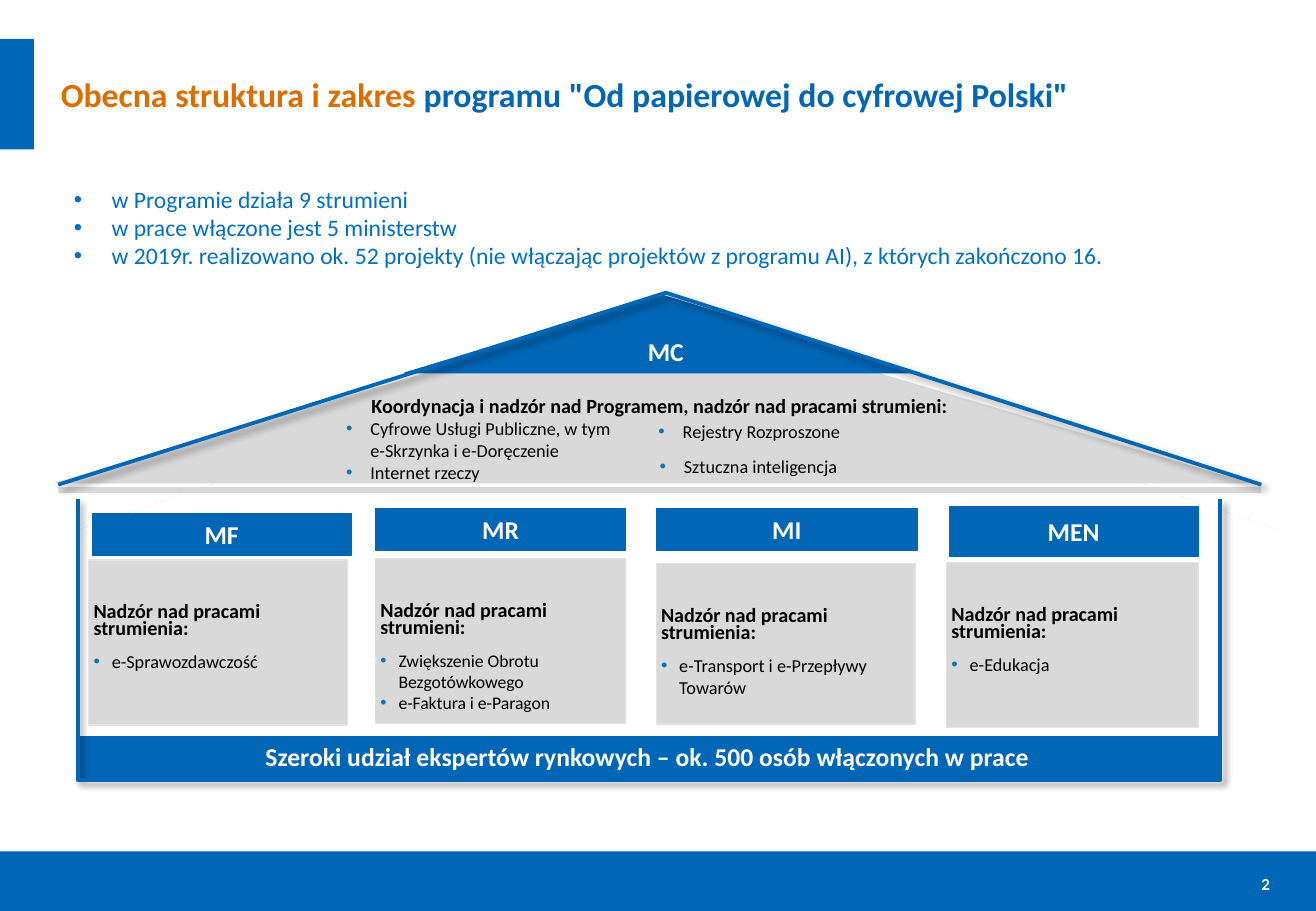
import pptx
import pptx.dml.color
import pptx.enum.shapes
import pptx.enum.text
import pptx.oxml.ns
import pptx.util
from dataclasses import dataclass
from lxml import etree

Inches, Pt = pptx.util.Inches, pptx.util.Pt
SHAPES = pptx.enum.shapes.MSO_SHAPE
ALIGN = pptx.enum.text.PP_ALIGN
ANCHOR = pptx.enum.text.MSO_ANCHOR
qn = pptx.oxml.ns.qn


@dataclass(frozen=True)
class Theme:
    font: str = "Calibri"
    blue: str = "0166B6"
    orange: str = "DC6E00"
    list_blue: str = "0070C0"
    bullet: str = "1174AE"
    grey: str = "D9D9D9"
    border: str = "E2E2E2"
    roof_grey: str = "D0D0D0"
    white: str = "FFFFFF"
    black: str = "000000"
    title: float = 20
    heading: float = 15.2
    intro: float = 14
    lead: float = 11.9
    item: float = 10.8
    small_item: float = 10.5
    page: float = 10


THEME = Theme()


def rgb(colour):
    return pptx.dml.color.RGBColor.from_string(colour)


def set_frame(frame, insets=(0.1, 0.05, 0.1, 0.05), anchor=ANCHOR.TOP, wrap=True):
    frame.margin_left, frame.margin_top, frame.margin_right, frame.margin_bottom = map(Inches, insets)
    frame.vertical_anchor = anchor
    frame.word_wrap = wrap
    frame.auto_size = pptx.enum.text.MSO_AUTO_SIZE.NONE


def add_text(frame, text, size=THEME.item, colour=THEME.black, bold=False, align=ALIGN.LEFT,
             indent=0, bullet=None, line=None, after=0):
    """Add a paragraph; text is a string or a list of (text, colour) runs."""
    first = frame.paragraphs[0]
    paragraph = frame.add_paragraph() if first.runs else first
    paragraph.alignment = align
    if bullet:
        properties = paragraph._p.get_or_add_pPr()
        properties.set("marL", str(Inches(indent)))
        properties.set("indent", str(-Inches(indent)))
        bullet_colour = etree.SubElement(properties, qn("a:buClr"))
        etree.SubElement(bullet_colour, qn("a:srgbClr"), val=bullet)
        etree.SubElement(properties, qn("a:buFont"), typeface="Arial")
        etree.SubElement(properties, qn("a:buChar"), char="•")
    paragraph.space_before, paragraph.space_after = Pt(0), Pt(after)
    if line:
        paragraph.line_spacing = Pt(line)
    for words, run_colour in [(text, colour)] if isinstance(text, str) else text:
        run = paragraph.add_run()
        run.text = words
        run.font.name, run.font.size, run.font.bold = THEME.font, Pt(size), bold
        run.font.color.rgb = rgb(run_colour)


def add_block(slide, box, fill, border=None, width=0.5, kind=SHAPES.RECTANGLE):
    block = slide.shapes.add_shape(kind, *map(Inches, box))
    block.shadow.inherit = False
    block.fill.solid()
    block.fill.fore_color.rgb = rgb(fill)
    if border:
        block.line.color.rgb = rgb(border)
        block.line.width = Pt(width)
    else:
        block.line.fill.background()
    return block


def add_heading(slide, box, text, insets=(0, 0, 0, 0), kind=SHAPES.RECTANGLE, wrap=True):
    heading = add_block(slide, box, THEME.blue, THEME.blue, kind=kind)
    set_frame(heading.text_frame, insets, ANCHOR.MIDDLE, wrap)
    add_text(heading.text_frame, text, size=THEME.heading, colour=THEME.white, bold=True, align=ALIGN.CENTER)


def add_label(slide, box, text, insets=(0.1, 0.05, 0.1, 0.05), wrap=True, **text_format):
    frame = slide.shapes.add_textbox(*map(Inches, box)).text_frame
    set_frame(frame, insets, wrap=wrap)
    for words in text if isinstance(text, list) else [text]:
        add_text(frame, words, **text_format)


def add_outline(slide, points):
    """Open blue line with a soft shadow to the lower right."""
    corners = [(Inches(x), Inches(y)) for x, y in points]
    builder = slide.shapes.build_freeform(*corners[0])
    builder.add_line_segments(corners[1:], close=False)
    outline = builder.convert_to_shape()
    outline.fill.background()
    outline.line.color.rgb = rgb(THEME.blue)
    outline.line.width = Pt(2.25)
    outline.shadow.inherit = False
    effects = outline._element.spPr.find(qn("a:effectLst"))
    shadow = etree.SubElement(effects, qn("a:outerShdw"), blurRad=str(Pt(4)), dist=str(Pt(3)),
                              dir="2700000", algn="tl", rotWithShape="0")
    shade = etree.SubElement(shadow, qn("a:srgbClr"), val=THEME.black)
    etree.SubElement(shade, qn("a:alpha"), val="40000")


def add_page_frame(slide, width, height):
    footer_top = 7.01
    add_block(slide, (0, footer_top, width, height - footer_top), THEME.blue)
    add_block(slide, (0, 0.32, 0.28, 0.91), THEME.blue)
    add_label(slide, (width - 0.45, footer_top + 0.18, 0.3, 0.19), "2", insets=(0, 0, 0, 0), wrap=False,
              size=THEME.page, colour=THEME.white, bold=True)


def add_title(slide, box):
    title = slide.shapes.title
    title.left, title.top, title.width, title.height = map(Inches, box)
    set_frame(title.text_frame, (0, 0.05, 0, 0.05), ANCHOR.MIDDLE)
    add_text(title.text_frame, [("Obecna struktura i zakres ", THEME.orange),
                                ('programu "Od papierowej do cyfrowej Polski"', THEME.blue)],
             size=THEME.title, bold=True)


def add_roof(slide, box):
    left, top, width, height = box
    # Pale gable behind the roof
    gable = add_block(slide, (left + 0.15, top + 0.26, width, 1.7), THEME.white, kind=SHAPES.ISOSCELES_TRIANGLE)
    gable.adjustments[0] = 0.503
    gable.fill.gradient()
    gable.fill.gradient_angle = 270
    for stop, colour, position in zip(gable.fill.gradient_stops, (THEME.roof_grey, THEME.white), (0, 0.85)):
        stop.color.rgb = rgb(colour)
        stop.position = position
    # Grey attic, eaves and the blue top
    attic = add_block(slide, (left - 0.05, top + 0.58, width - 0.03, 0.99), THEME.grey, kind=SHAPES.TRAPEZOID)
    attic.adjustments[0] = 3.375
    add_block(slide, (left, top + 1.6, width, 0.05), THEME.grey)
    add_heading(slide, (left + 2.85, top + 0.02, 4.24, 0.64), "MC", (0.17, 0.05, 0.11, 0.09),
                SHAPES.ISOSCELES_TRIANGLE, wrap=False)
    add_outline(slide, [(left, top + height), (left + 5, top), (left + width, top + height)])
    # Coordinated streams
    add_label(slide, (left + 2.46, top + 0.84, 4.97, 0.2),
              "Koordynacja i nadzór nad Programem, nadzór nad pracami strumieni:", insets=(0, 0, 0, 0),
              size=THEME.lead, bold=True, align=ALIGN.CENTER, line=13.6)
    streams = [
        (2.27, 0.98, 2.49, "Cyfrowe Usługi Publiczne, w tym e-Skrzynka i e-Doręczenie"),
        (2.27, 1.34, 3.09, "Internet rzeczy"),
        (4.84, 1.0, 2.56, "Rejestry Rozproszone"),
        (4.85, 1.29, 2.56, "Sztuczna inteligencja"),
    ]
    for x, y, stream_width, stream in streams:
        add_label(slide, (left + x, top + y, stream_width, 0.4), stream, indent=0.2, bullet=THEME.bullet)


def add_ministry(slide, name, heading_box, duty_box, lead, streams, size=THEME.item, after=6.5):
    duty = add_block(slide, duty_box, THEME.grey, THEME.border, 0.75)
    set_frame(duty.text_frame, (0.04, 0.38, 0.04, 0.11))
    add_text(duty.text_frame, lead, size=THEME.lead, bold=True, line=10, after=6.5)
    for stream in streams:
        add_text(duty.text_frame, stream, size=size, indent=0.15, bullet=THEME.bullet, after=after)
    add_heading(slide, heading_box, name)


def add_walls(slide, box):
    left, top, width, height = box
    add_heading(slide, (left, top + 1.95, width - 0.02, 0.34),
                "Szeroki udział ekspertów rynkowych – ok. 500 osób włączonych w prace", (0.11, 0.05, 0.11, 0.05))
    add_outline(slide, [(left, top), (left, top + height), (left + width, top + height), (left + width, top)])
    # Ministries
    one, many = "Nadzór nad pracami strumienia:", "Nadzór nad pracami strumieni:"
    add_ministry(slide, "MF", (left + 0.12, top + 0.12, 2.13, 0.34), (left + 0.09, top + 0.5, 2.13, 1.36),
                 one, ["e-Sprawozdawczość"])
    add_ministry(slide, "MR", (left + 2.45, top + 0.08, 2.06, 0.34), (left + 2.45, top + 0.49, 2.06, 1.36),
                 many, ["Zwiększenie Obrotu Bezgotówkowego", "e-Faktura i e-Paragon"],
                 size=THEME.small_item, after=0)
    add_ministry(slide, "MI", (left + 4.76, top + 0.08, 2.15, 0.34), (left + 4.76, top + 0.53, 2.13, 1.32),
                 one, ["e-Transport i e-Przepływy Towarów"])
    add_ministry(slide, "MEN", (left + 7.17, top + 0.06, 2.05, 0.41), (left + 7.15, top + 0.52, 2.07, 1.36),
                 one, ["e-Edukacja"])


def main():
    width, height = 10.83, 7.5
    deck = pptx.Presentation()
    deck.slide_width, deck.slide_height = Inches(width), Inches(height)
    slide = deck.slides.add_slide(deck.slide_layouts.get_by_name("Title Only"))
    add_page_frame(slide, width, height)
    add_title(slide, (0.5, 0.32, 9.25, 0.91))
    add_roof(slide, (0.48, 2.41, 9.9, 1.58))
    add_walls(slide, (0.64, 4.11, 9.4, 2.31))
    # Programme summary
    add_label(slide, (0.51, 1.42, 9.01, 0.91),
              ["w Programie działa 9 strumieni", "w prace włączone jest 5 ministerstw",
               "w 2019r. realizowano ok. 52 projekty (nie włączając projektów z programu AI), z których zakończono 16."],
              insets=(0.1, 0.1, 0.1, 0.1), size=THEME.intro, colour=THEME.list_blue, indent=0.31,
              bullet=THEME.list_blue)
    deck.save("out.pptx")


if __name__ == "__main__":
    main()
